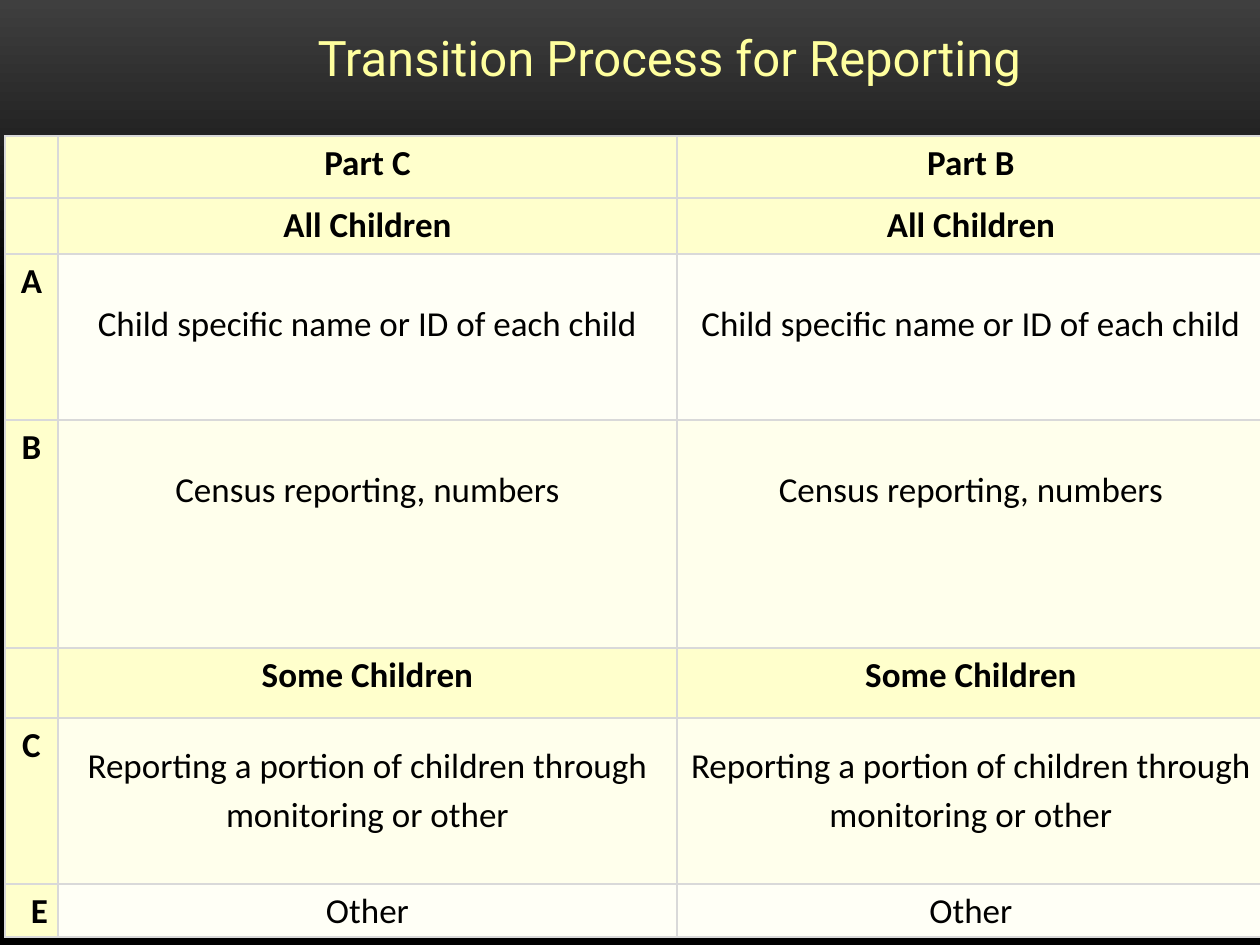
from lxml.etree import SubElement
from pptx import Presentation
from pptx.dml.color import RGBColor
from pptx.enum.text import MSO_ANCHOR, PP_ALIGN
from pptx.oxml.ns import qn
from pptx.util import Emu, Pt

EMU_PER_PX = 914400 / 126
HEADING, PALE, IVORY = "FFFFCC", "FFFFEC", "FFFFF6"
GRID = "D9D9D9"
COLUMN_WIDTHS = [53, 619, 588]
ROWS = [
    dict(height=62, texts=["", "Part C", "Part B"], fill=HEADING, bold=True),
    dict(height=56, texts=["", "All Children", "All Children"], fill=HEADING, bold=True),
    dict(height=166, texts=["A"] + ["Child specific name or ID of each child"] * 2,
         fill=IVORY, drop=43),
    dict(height=228, texts=["B"] + ["Census reporting, numbers"] * 2, fill=PALE, drop=43),
    dict(height=70, texts=["", "Some Children", "Some Children"], fill=HEADING, bold=True),
    dict(height=166, texts=["C"] + ["Reporting a portion of children through monitoring or other"] * 2,
         fill=PALE, drop=21),
    dict(height=53, texts=["E", "Other", "Other"], fill=IVORY, letter_indent=16),
]


def px(length):
    """Turn pixels into EMU."""
    return Emu(round(length * EMU_PER_PX))


def color(value):
    """Turn a hex string into a colour."""
    return RGBColor.from_string(value)


def write(frame, text, *, font, size, fill, bold=False, align=PP_ALIGN.LEFT, spacing=1.0):
    """Write one formatted paragraph into a text frame."""
    paragraph = frame.paragraphs[0]
    paragraph.alignment = align
    paragraph.line_spacing = spacing
    run = paragraph.add_run()
    run.text = text
    run.font.name = font
    run.font.size = Pt(size)
    run.font.bold = bold
    run.font.color.rgb = color(fill)


def outline(cell):
    """Draw a thin line on every side of a cell."""
    properties = cell._tc.get_or_add_tcPr()
    for index, side in enumerate(("lnL", "lnR", "lnT", "lnB")):
        border = SubElement(properties, qn(f"a:{side}"), w=str(Pt(1)))
        solid = SubElement(border, qn("a:solidFill"))
        SubElement(solid, qn("a:srgbClr"), val=GRID)
        properties.insert(index, border)


def paint_background(slide):
    """Fade the slide from dark grey to black."""
    fill = slide.background.fill
    fill.gradient()
    fill.gradient_angle = 270
    for stop, position, shade in zip(fill.gradient_stops, (0, 0.31), ("3F3F3F", "000000")):
        stop.position = position
        stop.color.rgb = color(shade)


def place_title(slide, left, top, width, height):
    """Place the slide title in its box."""
    title = slide.shapes.title
    title.left, title.top, title.width, title.height = map(px, (left, top, width, height))
    frame = title.text_frame
    frame.word_wrap = True
    frame.vertical_anchor = MSO_ANCHOR.TOP
    write(frame, "Transition Process for Reporting", font="Roboto", size=28, fill="FFFF9E")


def fill_cell(cell, text, *, fill, bold, drop=0, indent=0):
    """Format one table cell and write its text."""
    cell.fill.solid()
    cell.fill.fore_color.rgb = color(fill)
    outline(cell)
    cell.margin_left = px(9 + indent)
    cell.margin_right = px(9)
    cell.margin_top = px(drop)
    cell.margin_bottom = 0
    if text:
        write(cell.text_frame, text, font="Calibri", size=20, fill="000000",
              bold=bold, align=PP_ALIGN.CENTER, spacing=1.15)


def place_reporting_table(slide, left, top):
    """Place the table that compares Part C with Part B."""
    width, height = sum(COLUMN_WIDTHS), sum(row["height"] for row in ROWS)
    table = slide.shapes.add_table(len(ROWS), len(COLUMN_WIDTHS),
                                   *map(px, (left, top, width, height))).table
    table.first_row = table.horz_banding = False
    for column, column_width in zip(table.columns, COLUMN_WIDTHS):
        column.width = px(column_width)
    for table_row, row in zip(table.rows, ROWS):
        table_row.height = px(row["height"])
        letter, *answers = zip(table_row.cells, row["texts"])
        fill_cell(*letter, fill=HEADING, bold=True, indent=row.get("letter_indent", 0))
        for cell, text in answers:
            fill_cell(cell, text, fill=row["fill"], bold=row.get("bold", False),
                      drop=row.get("drop", 0))


def main():
    """Build the slide and save it."""
    presentation = Presentation()
    presentation.slide_width, presentation.slide_height = px(1260), px(945)
    slide = presentation.slides.add_slide(presentation.slide_layouts[5])
    paint_background(slide)
    place_reporting_table(slide, 5, 136)
    place_title(slide, 305, 21, 746, 72)
    presentation.save("out.pptx")


if __name__ == "__main__":
    main()
